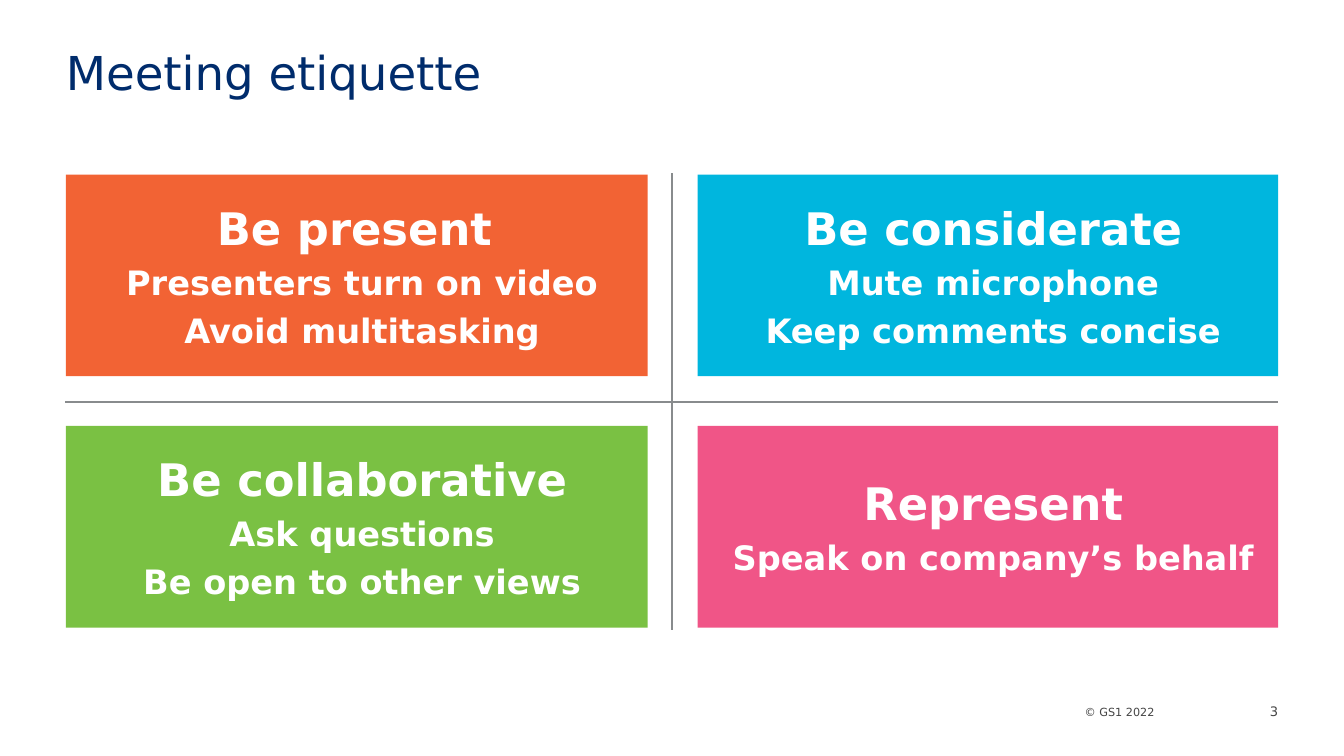
"""Build the meeting etiquette slide with four coloured cards."""
from pptx import Presentation, util as u
from pptx.dml.color import RGBColor
from pptx.enum import shapes, text
from pptx.oxml import ns
from lxml import etree

FONT = "DejaVu Sans"
HUES = {"navy": "002C6C", "grey": "454545", "rule": "888B8D", "white": "FFFFFF",
        "orange": "F26334", "blue": "00B6DE", "green": "7AC143", "pink": "F05587"}
CARDS = [
    ("orange", ["Be present ", "Presenters turn on video", "Avoid multitasking"]),
    ("blue", ["Be considerate", "Mute microphone", "Keep comments concise"]),
    ("green", ["Be collaborative", "Ask questions", "Be open to other views"]),
    ("pink", ["Represent", "Speak on company’s behalf"]),
]


def style(para, size, hue, align, bold=False):
    para.alignment = align
    for run in para.runs:
        run.font.name = FONT
        run.font.size = u.Pt(size)
        run.font.bold = bold
        run.font.color.rgb = RGBColor.from_string(HUES[hue])


def inset(frame, left, top, right, bottom):
    frame.margin_left, frame.margin_top = u.Inches(left), u.Inches(top)
    frame.margin_right, frame.margin_bottom = u.Inches(right), u.Inches(bottom)
    frame.vertical_anchor = text.MSO_ANCHOR.MIDDLE
    frame.word_wrap = True
    frame.auto_size = text.MSO_AUTO_SIZE.NONE


deck = Presentation()
deck.slide_width = u.Inches(10)
deck.slide_height = u.Inches(10) * 9 // 16
slide = deck.slides.add_slide(deck.slide_layouts[5])

title = slide.shapes.title
title.left, title.top = u.Inches(0.49), u.Inches(0.19)
title.width, title.height = u.Inches(9.02), u.Inches(0.74)
frame = title.text_frame
frame.text = "Meeting etiquette"
inset(frame, 0, 0.05, 0.1, 0.05)
frame.paragraphs[0].line_spacing = 0.9
style(frame.paragraphs[0], 25, "navy", text.PP_ALIGN.LEFT)

for ends in [(5, 1.29, 5, 4.69), (9.51, 2.99, 0.48, 2.99)]:
    rule = slide.shapes.add_connector(
        shapes.MSO_CONNECTOR.STRAIGHT, *[u.Inches(end) for end in ends])
    rule.line.color.rgb = RGBColor.from_string(HUES["rule"])
    rule.line.width = u.Pt(1)
    etree.SubElement(rule._element.spPr, ns.qn("a:effectLst"))

for spot, (hue, lines) in enumerate(CARDS):
    row, col = divmod(spot, 2)
    card = slide.shapes.add_shape(
        shapes.MSO_SHAPE.RECTANGLE, u.Inches(0.49 + 4.7 * col),
        u.Inches(1.3 + 1.87 * row), u.Inches(4.33 - 0.01 * col), u.Inches(1.5))
    card.shadow.inherit = False
    card.fill.solid()
    card.fill.fore_color.rgb = RGBColor.from_string(HUES[hue])
    card.line.fill.background()
    frame = card.text_frame
    frame.text = "\n".join(lines)
    inset(frame, 0.1, 0.05, 0.1, 0.05)
    for place, para in enumerate(frame.paragraphs):
        para._p.get_or_add_pPr().set("marL", str(u.Inches(0.08)))
        para.space_before = u.Pt(4 if place else 0)
        style(para, 18 if place else 24, "white", text.PP_ALIGN.CENTER, True)

for words, size, *place in [("© GS1 2022", 6, 5.56, 5.24, 3.03, 0.11),
                            ("3", 7, 9.24, 5.21, 0.27, 0.16)]:
    note = slide.shapes.add_textbox(*[u.Inches(part) for part in place])
    note.text_frame.text = words
    inset(note.text_frame, 0, 0, 0, 0)
    style(note.text_frame.paragraphs[0], size, "grey", text.PP_ALIGN.RIGHT)

deck.save("out.pptx")
